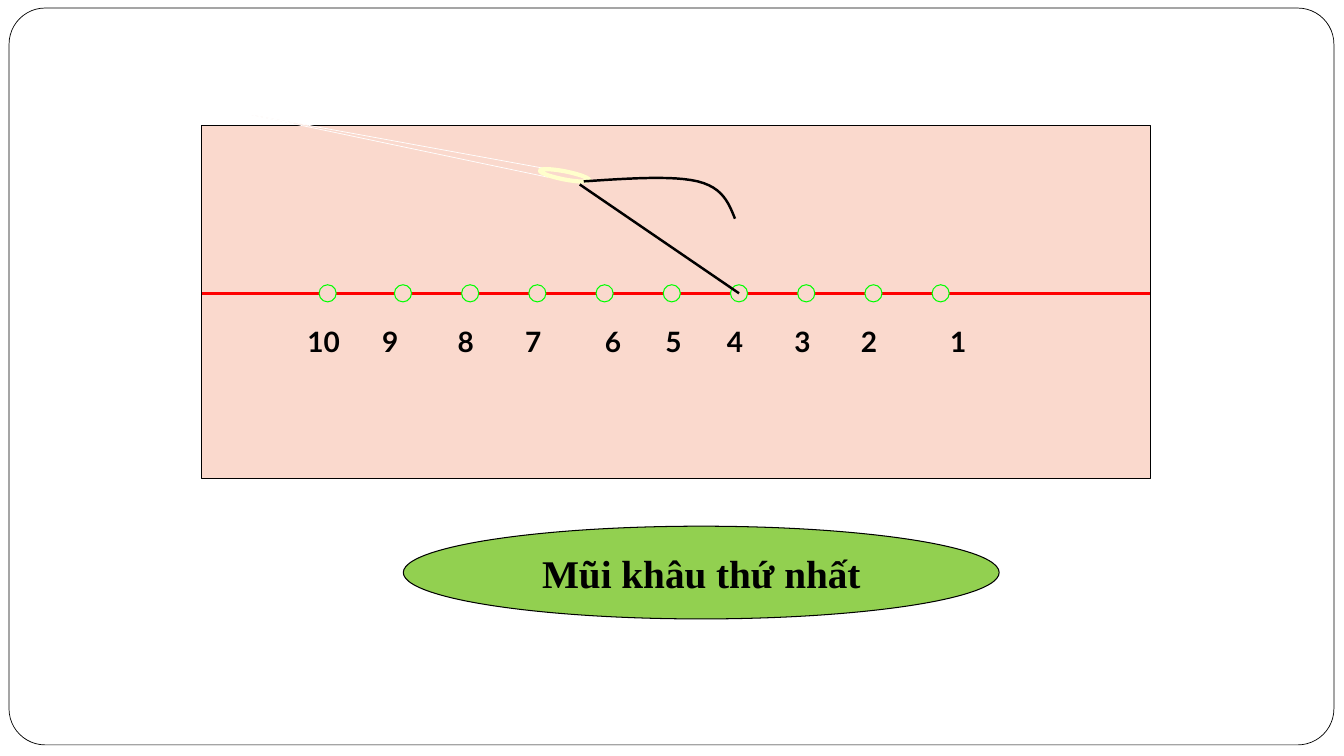
from dataclasses import dataclass
from itertools import pairwise

from pptx import Presentation
from pptx.dml.color import RGBColor
from pptx.enum.shapes import MSO_CONNECTOR, MSO_SHAPE
from pptx.enum.text import MSO_ANCHOR, MSO_AUTO_SIZE, PP_ALIGN
from pptx.oxml import parse_xml
from pptx.oxml.ns import nsdecls
from pptx.util import Inches, Pt


@dataclass(frozen=True)
class Theme:
    paper: str = "FFFFFF"
    ink: str = "000000"
    cloth: str = "FAD9CD"
    seam: str = "FF0000"
    hole: str = "00FF00"
    eye: str = "FFFFCC"
    caption: str = "92D050"
    number_font: str = "Lato"
    caption_font: str = "Times New Roman"
    number_size: float = 20
    caption_size: float = 28


@dataclass(frozen=True)
class Box:
    left: float
    top: float
    width: float
    height: float

    def inside(self, left, top, width, height):
        return Box(self.left + left, self.top + top, width, height)

    def point(self, across, down):
        return Inches(self.left + across), Inches(self.top + down)

    def lengths(self):
        return [Inches(side) for side in (self.left, self.top, self.width, self.height)]


THEME = Theme()
HOLE_SIZE = 0.17
SEAM_DOWN = 1.66
HOLES = [1.25] + [7.33 - step * 2 / 3 for step in range(8, -1, -1)]
SEAM_RUNS = [
    [0, 1.25, 2.08, 2.92, 3.75, 4.58, 5.5],
    [5.33, 6.17, 6.83, 7.33, 9.41],
    [5.25, 7.25],
    [6.67, 7.33],
]
NUMBER_BOXES = [
    (0.92, 0.58), (1.58, 0.58), (2.33, 0.58), (3, 0.58), (3.83, 0.5),
    (4.5, 0.42), (5, 0.58), (5.67, 0.58), (6.33, 0.58), (7.17, 0.67),
]
LEFT_ALIGNED_NUMBER = 5
THREAD_CURVES = [
    [(3.79, 0.55), (4.23, 0.52), (4.67, 0.49), (4.92, 0.55)],
    [(4.92, 0.55), (5.17, 0.61), (5.23, 0.77), (5.29, 0.92)],
]
CURVE_STEPS = 12


def fill_shape(shape, color):
    shape.fill.solid()
    shape.fill.fore_color.rgb = RGBColor.from_string(color)


def paint(shape, fill, line, weight):
    shape.shadow.inherit = False
    fill_shape(shape, fill)
    shape.line.color.rgb = RGBColor.from_string(line)
    shape.line.width = Pt(weight)


def add_figure(page, kind, box, fill, line, weight, rotation=0):
    shape = page.shapes.add_shape(kind, *box.lengths())
    paint(shape, fill, line, weight)
    shape.rotation = rotation
    return shape


def add_line(page, start, end, color, weight):
    line = page.shapes.add_connector(MSO_CONNECTOR.STRAIGHT, *start, *end)
    line.line.color.rgb = RGBColor.from_string(color)
    line.line.width = Pt(weight)
    line._element.spPr.append(parse_xml(f"<a:effectLst {nsdecls('a')}/>"))


def write(shape, text, font, size, alignment, frame_format):
    frame = shape.text_frame
    for name, value in frame_format.items():
        setattr(frame, name, value)
    para = frame.paragraphs[0]
    para.alignment = alignment
    span = para.add_run()
    span.text = text
    for name, value in {"name": font, "size": Pt(size), "bold": True}.items():
        setattr(span.font, name, value)
    span.font.color.rgb = RGBColor.from_string(THEME.ink)


def curve_point(controls, share):
    rest = 1 - share
    weights = (rest**3, 3 * rest**2 * share, 3 * rest * share**2, share**3)
    return [sum(weight * value for weight, value in zip(weights, values))
            for values in zip(*controls)]


def draw_frame(page, box):
    frame = add_figure(page, MSO_SHAPE.ROUNDED_RECTANGLE, box, THEME.paper, THEME.ink, 0.5)
    frame.adjustments[0] = 0.049


def draw_seam(page, box):
    for joints in SEAM_RUNS:
        for start, end in pairwise(joints):
            add_line(page, box.point(start, SEAM_DOWN), box.point(end, SEAM_DOWN),
                     THEME.seam, 2.25)
    for hole in HOLES:
        ring = box.inside(hole - HOLE_SIZE / 2, SEAM_DOWN - HOLE_SIZE / 2, HOLE_SIZE, HOLE_SIZE)
        add_figure(page, MSO_SHAPE.OVAL, ring, THEME.cloth, THEME.hole, 0.75)


def draw_numbers(page, box):
    frame_format = {"word_wrap": True, "auto_size": MSO_AUTO_SIZE.SHAPE_TO_FIT_TEXT}
    for index, (left, width) in enumerate(NUMBER_BOXES):
        number = len(NUMBER_BOXES) - index
        alignment = PP_ALIGN.LEFT if number == LEFT_ALIGNED_NUMBER else PP_ALIGN.CENTER
        label = page.shapes.add_textbox(*box.inside(left, 1.92, width, 0.43).lengths())
        fill_shape(label, THEME.cloth)
        write(label, str(number), THEME.number_font, THEME.number_size, alignment, frame_format)


def draw_needle(page, box):
    add_figure(page, MSO_SHAPE.FLOWCHART_EXTRACT, box.inside(1.93, -1.32, 0.08, 3),
               THEME.cloth, THEME.paper, 0.5, 281.1)
    add_figure(page, MSO_SHAPE.OVAL, box.inside(3.35, 0.45, 0.5, 0.08),
               THEME.cloth, THEME.eye, 3, 11.1)


def draw_thread(page, box):
    add_line(page, box.point(HOLES[6], SEAM_DOWN), box.point(3.75, 0.58), THEME.ink, 1.75)
    builder = page.shapes.build_freeform(*box.point(*THREAD_CURVES[0][0]))
    points = [box.point(*curve_point(controls, step / CURVE_STEPS))
              for controls in THREAD_CURVES for step in range(1, CURVE_STEPS + 1)]
    builder.add_line_segments(points, close=False)
    paint(builder.convert_to_shape(), THEME.cloth, THEME.ink, 1.75)


def draw_cloth(page, box):
    add_figure(page, MSO_SHAPE.RECTANGLE, box, THEME.cloth, THEME.ink, 0.75)
    for draw in (draw_seam, draw_numbers, draw_needle, draw_thread):
        draw(page, box)


def draw_caption(page, box):
    caption = add_figure(page, MSO_SHAPE.OVAL, box, THEME.caption, THEME.ink, 0.75)
    write(caption, "Mũi khâu thứ nhất", THEME.caption_font, THEME.caption_size,
          PP_ALIGN.CENTER, {"word_wrap": False, "vertical_anchor": MSO_ANCHOR.MIDDLE})


def main():
    deck = Presentation()
    deck.slide_width = Inches(13.33)
    deck.slide_height = Inches(7.5)
    page = deck.slides.add_slide(deck.slide_layouts[6])
    draw_frame(page, Box(0.09, 0.08, 13.14, 7.31))
    draw_cloth(page, Box(2, 1.25, 9.41, 3.5))
    draw_caption(page, Box(4, 5.22, 5.91, 0.92))
    deck.save("out.pptx")


if __name__ == "__main__":
    main()
